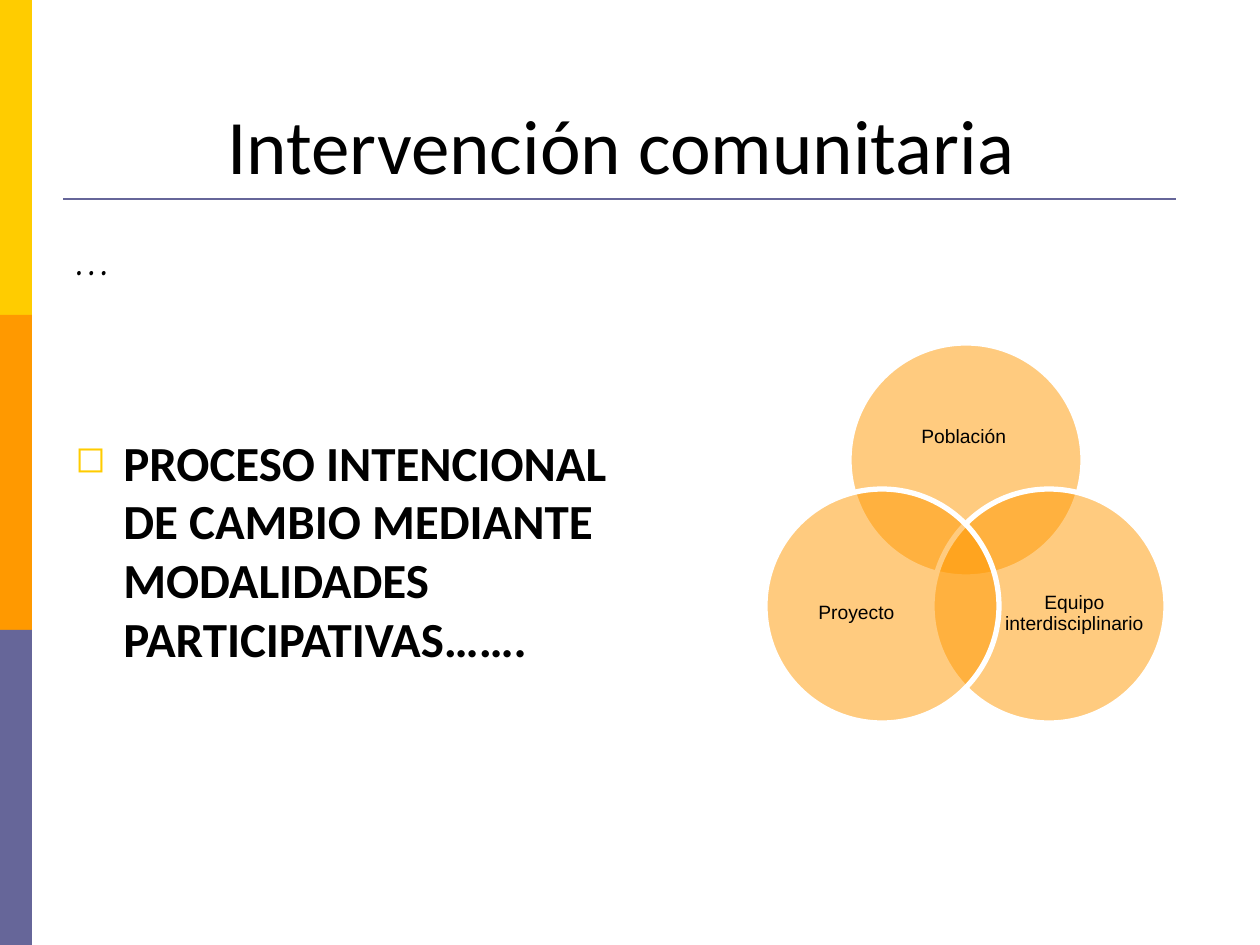
import pptx
import pptx.dml.color
import pptx.enum.shapes
import pptx.enum.text
import pptx.oxml
import pptx.oxml.ns
import pptx.util
import lxml.etree

SCALE = 914400 / 126
KIND = pptx.enum.shapes.MSO_SHAPE
ALIGN = pptx.enum.text.PP_ALIGN
ANCHOR = pptx.enum.text.MSO_ANCHOR


def emu(*sizes):
    return [pptx.util.Emu(round(size * SCALE)) for size in sizes]


def color(code):
    return pptx.dml.color.RGBColor.from_string(code)


def child(parent, tag, **attrs):
    return lxml.etree.SubElement(parent, pptx.oxml.ns.qn(tag), attrs)


def write(para, text, font="Calibri", size=28, bold=False, align=ALIGN.LEFT,
          before=0, spacing=1.0):
    para.alignment = align
    para.space_before = pptx.util.Pt(before)
    para.line_spacing = spacing
    run = para.add_run()
    run.text = text
    run.font.name = font
    run.font.size = pptx.util.Pt(size)
    run.font.bold = bold
    run.font.color.rgb = color("000000")


class Deck:
    violet, orange, yellow, white = "666699", "FF9900", "FFCC00", "FFFFFF"

    def __init__(self):
        self.file = pptx.Presentation()
        self.file.slide_width, self.file.slide_height = emu(1260, 945)
        self.slide = self.file.slides.add_slide(self.file.slide_layouts[6])
        self.items = self.slide.shapes

    def group(self):
        self.items = self.slide.shapes.add_group_shape().shapes

    def shape(self, kind, box, fill):
        item = self.items.add_shape(kind, *emu(*box))
        item.shadow.inherit = False
        item.fill.solid()
        item.fill.fore_color.rgb = color(fill)
        item.line.fill.background()
        return item

    def circle(self, left, top, size):
        item = self.shape(KIND.OVAL, (left, top, size, size), self.orange)
        tint = item.fill._xPr.find(".//" + pptx.oxml.ns.qn("a:srgbClr"))
        child(tint, "a:alpha", val="50000")
        item.line.color.rgb = color(self.white)
        item.line.width = pptx.util.Pt(3)

    def rule(self, left, top, right):
        item = self.items.add_connector(
            pptx.enum.shapes.MSO_CONNECTOR.STRAIGHT, *emu(left, top, right, top))
        item.line.color.rgb = color(self.violet)
        item.line.width = pptx.util.Pt(1.5)
        child(item._element.spPr, "a:effectLst")

    def text(self, box, anchor=ANCHOR.TOP, inset=None):
        frame = self.items.add_textbox(*emu(*box)).text_frame
        frame.word_wrap = True
        frame.vertical_anchor = anchor
        if inset is not None:
            frame.margin_left = frame.margin_right = inset
            frame.margin_top = frame.margin_bottom = inset
        return frame

    def bullet(self, para, mark, indent):
        props = para._p.get_or_add_pPr()
        step = emu(indent)[0]
        props.set("marL", str(step))
        props.set("indent", str(-step))
        child(child(props, "a:buClr"), "a:srgbClr", val=self.yellow)
        child(props, "a:buSzPct", val="75000")
        child(props, "a:buChar", char=mark)


def main():
    deck = Deck()
    for row, fill in enumerate((deck.yellow, deck.orange, deck.violet)):
        deck.shape(KIND.RECTANGLE, (0, row * 315, 32, 315), fill)
    deck.rule(63, 199, 1176)

    title = deck.text((63, 38, 1134, 158), ANCHOR.BOTTOM)
    write(title.paragraphs[0], "Intervención comunitaria ", size=44,
          align=ALIGN.CENTER)

    body = deck.text((63, 220, 557, 624))
    write(body.paragraphs[0], "…", font="Comic Neue", before=5.6)
    point = body.add_paragraph()
    write(point, "PROCESO INTENCIONAL DE CAMBIO MEDIANTE MODALIDADES "
          "PARTICIPATIVAS…….", bold=True, before=84)
    deck.bullet(point, "◻", 48)

    deck.group()
    venn = (
        ("Población ", (849, 343), (881, 384, 171, 106)),
        ("Equipo interdisciplinario", (932, 489), (1004, 549, 141, 129)),
        ("Proyecto", (765, 489), (786, 549, 141, 129)),
    )
    for label, spot, box in venn:
        deck.circle(*spot, 234)
        frame = deck.text(box, ANCHOR.MIDDLE, inset=0)
        write(frame.paragraphs[0], label, font="Arial", size=11,
              align=ALIGN.CENTER, spacing=0.9)

    deck.file.save("out.pptx")


if __name__ == "__main__":
    main()
